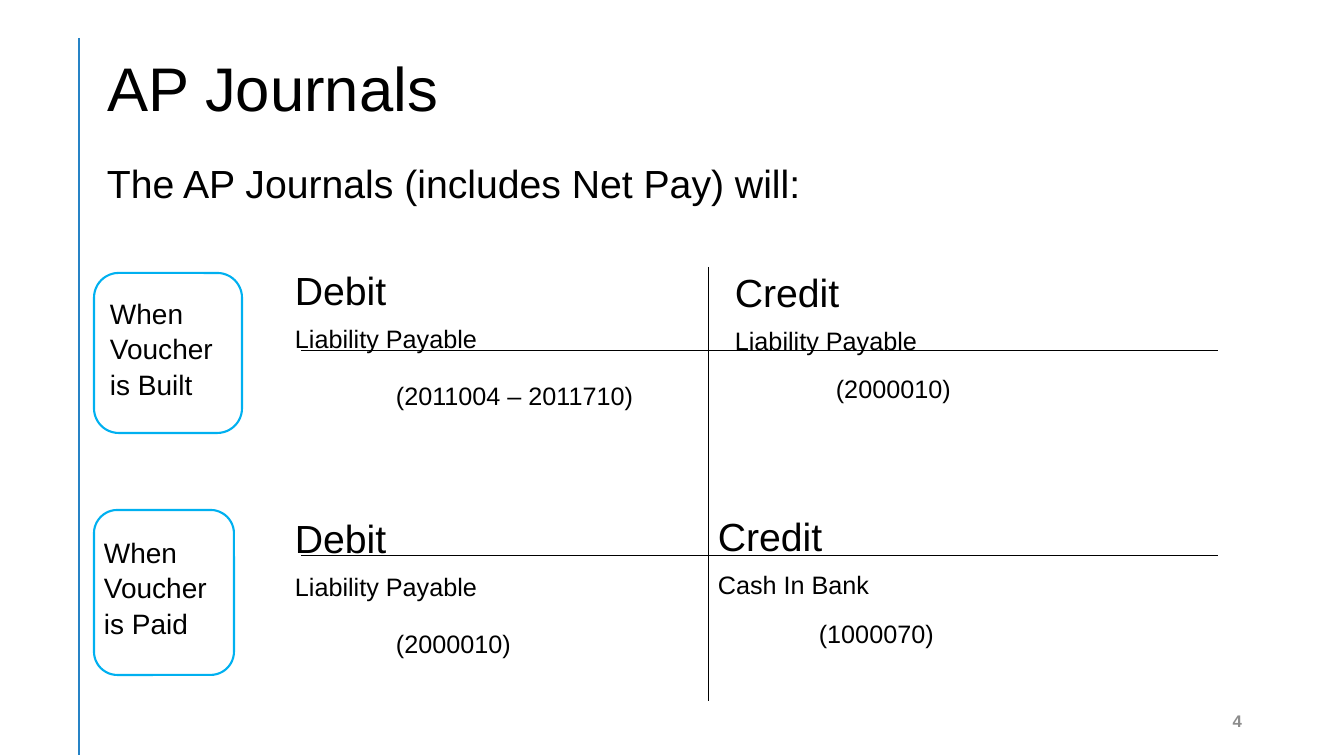
"""Build the AP Journals slide with its debit and credit T-accounts."""
from lxml import etree
from pptx import Presentation
from pptx.dml.color import RGBColor
from pptx.enum.shapes import MSO_CONNECTOR, MSO_SHAPE
from pptx.enum.text import MSO_ANCHOR, MSO_AUTO_SIZE, PP_ALIGN
from pptx.oxml.ns import qn
from pptx.util import Emu, Pt

PX = 914400 / 100.8
BLACK = RGBColor(0, 0, 0)
GRAY = RGBColor(0x8C, 0x8C, 0x8C)
BLUE = RGBColor(0x26, 0x83, 0xC6)
SKY = RGBColor(0x00, 0xB0, 0xF0)
STRAIGHT = MSO_CONNECTOR.STRAIGHT
ROUNDED = MSO_SHAPE.ROUNDED_RECTANGLE
TOP, MIDDLE = MSO_ANCHOR.TOP, MSO_ANCHOR.MIDDLE
LEFT, RIGHT = PP_ALIGN.LEFT, PP_ALIGN.RIGHT
NO_AUTOFIT = MSO_AUTO_SIZE.NONE


def px(*lengths):
    return [Emu(round(length * PX)) for length in lengths]


def write(shape, text, size=20, color=BLACK, bold=False, align=LEFT, anchor=TOP,
          before=0, after=0, indent=0, spacing=1.05, first=True):
    frame = shape.text_frame
    frame.word_wrap = True
    frame.auto_size = NO_AUTOFIT
    frame.vertical_anchor = anchor
    paragraph = frame.paragraphs[0] if first else frame.add_paragraph()
    paragraph.alignment = align
    paragraph.line_spacing = spacing
    paragraph.space_before, paragraph.space_after = Pt(before), Pt(after)
    if indent:
        paragraph._p.get_or_add_pPr().set("marL", str(px(indent)[0]))
    run = paragraph.add_run()
    run.text = text
    run.font.name, run.font.size, run.font.bold = "Arial", Pt(size), bold
    run.font.color.rgb = color


presentation = Presentation()
presentation.slide_width, presentation.slide_height = px(1344, 756)
slide = presentation.slides.add_slide(presentation.slide_layouts[5])
shapes = slide.shapes

rules = [
    (79, 38, 79, 755, BLUE, 2),
    (301, 350, 1218, 350, BLACK, 0.5),
    (301, 555, 1218, 555, BLACK, 0.5),
    (708, 267, 708, 701, BLACK, 0.5),
]
for x1, y1, x2, y2, color, width in rules:
    rule = shapes.add_connector(STRAIGHT, *px(x1, y1, x2, y2))
    rule.line.color.rgb = color
    rule.line.width = Pt(width)
    etree.SubElement(rule._element.spPr, qn("a:effectLst"))

title = shapes.title
title.left, title.top, title.width, title.height = px(97, 33, 1159, 105)
write(title, "AP Journals", size=44, anchor=MIDDLE)

subtitle = shapes.add_textbox(*px(97, 129, 1159, 105))
write(subtitle, "The AP Journals (includes Net Pay) will:", size=28, anchor=MIDDLE)

accounts = [
    (285, 257, 422, "Debit", "Liability Payable", "(2011004 – 2011710)", 6),
    (725, 259, 462, "Credit", "Liability Payable", "(2000010)", 0),
    (285, 505, 422, "Debit", "Liability Payable", "(2000010)", 6),
    (708, 503, 462, "Credit", "Cash In Bank", "(1000070)", 0),
]
for left, top, width, side, account, code, code_before in accounts:
    entry = shapes.add_textbox(*px(left, top, width, 175))
    entry.text_frame.margin_top = px(7)[0]
    write(entry, side, size=28)
    write(entry, account, size=18, before=6, after=12, first=False)
    write(entry, code, size=18, before=code_before, after=12, indent=101, first=False)

stages = [
    ("When Voucher is Built", (94, 273, 148, 160), (100, 290, 148, 108)),
    ("When Voucher is Paid", (94, 510, 140, 165), (94, 529, 140, 112)),
]
for text, outline, label_box in stages:
    card = shapes.add_shape(ROUNDED, *px(*outline))
    card.shadow.inherit = False
    card.fill.background()
    card.line.color.rgb = SKY
    card.line.width = Pt(1.5)
    write(shapes.add_textbox(*px(*label_box)), text)

page_number = shapes.add_textbox(*px(950, 701, 302, 40))
write(page_number, "4", size=12, color=GRAY, bold=True, align=RIGHT, anchor=MIDDLE, spacing=1.0)

presentation.save("out.pptx")
